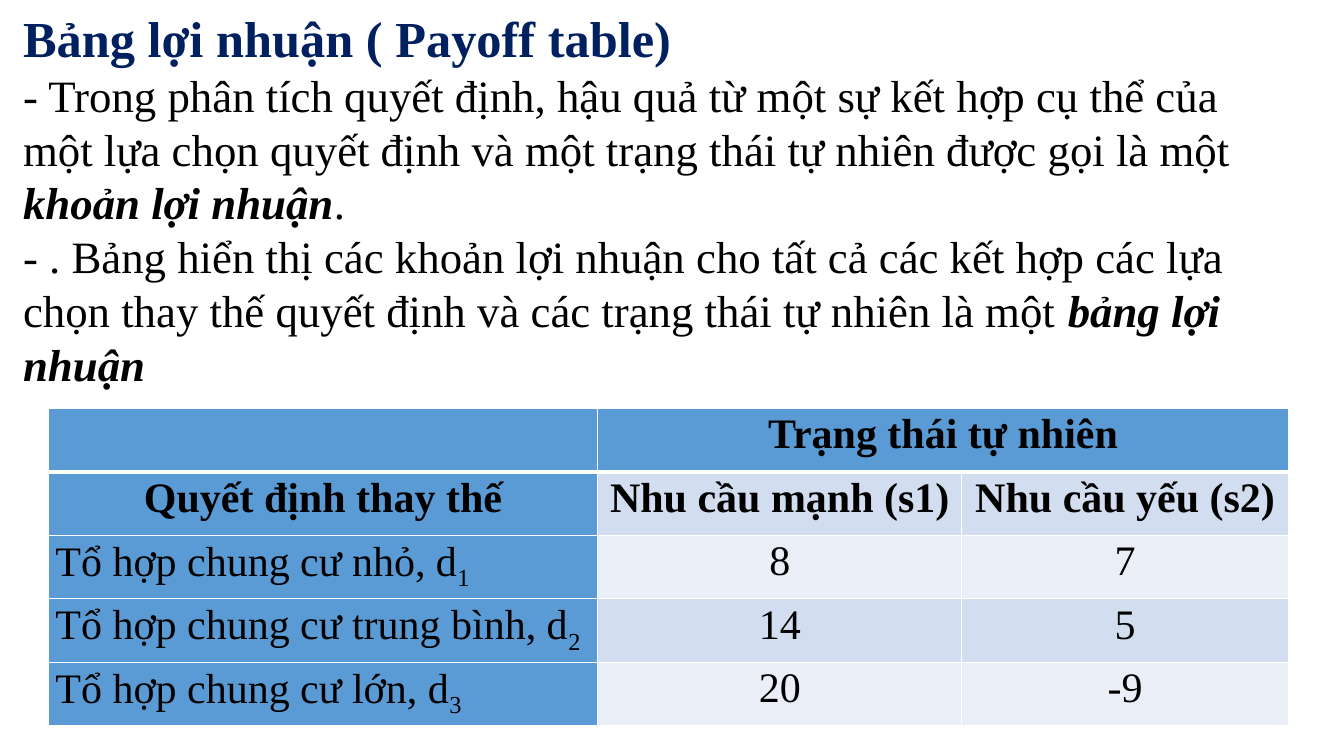
from dataclasses import dataclass

from lxml import etree
from pptx import Presentation
from pptx import util as u
from pptx.dml.color import RGBColor
from pptx.enum import text
from pptx.oxml import ns

PX = 9144  # EMU in one px, 100 px to the inch


@dataclass(frozen=True)
class Theme:
    font: str = "Times New Roman"
    title: str = "002060"
    ink: str = "000000"
    line: str = "FFFFFF"
    header: str = "5B9BD5"
    bands: tuple = ("D2DEEF", "EAEFF7")
    title_size: int = 36
    body_size: int = 32
    table_size: int = 30


class SlideBuilder:
    def __init__(self, prs, theme):
        self.theme = theme
        self.s = prs.slides.add_slide(prs.slide_layouts[6])

    def add_runs(self, p, parts, size, color, bold=False):
        """Add (text, mark) parts; a mark is "", "strong" or "sub"."""
        for content, mark in parts:
            r = p.add_run()
            r.text = content
            f = r.font
            f.name, f.size = self.theme.font, u.Pt(size)
            f.color.rgb = RGBColor.from_string(color)
            f.bold = bold or mark == "strong"
            f.italic = mark == "strong"
            if mark == "sub":
                r._r.get_or_add_rPr().set("baseline", "-25000")

    def text_box(self, box, title, paragraphs):
        t = self.theme
        tf = self.s.shapes.add_textbox(*(n * PX for n in box)).text_frame
        tf.word_wrap = True
        tf.auto_size = text.MSO_AUTO_SIZE.SHAPE_TO_FIT_TEXT
        self.add_runs(tf.paragraphs[0], [(title, "")], t.title_size, t.title, True)
        for parts in paragraphs:
            self.add_runs(tf.add_paragraph(), parts, t.body_size, t.ink)

    def borders(self, cell, **widths):
        """Draw the cell's edges, 1 pt wide unless a width is given."""
        tc_pr = cell._tc.get_or_add_tcPr()
        for edge in "LRTB":
            width = u.Pt(widths.get(edge, 1))
            ln = etree.SubElement(tc_pr, ns.qn(f"a:ln{edge}"), w=str(width))
            fill = etree.SubElement(ln, ns.qn("a:solidFill"))
            etree.SubElement(fill, ns.qn("a:srgbClr"), val=self.theme.line)

    def cell(self, cell, parts, fill, bold, centred):
        cell.fill.solid()
        cell.fill.fore_color.rgb = RGBColor.from_string(fill)
        cell.margin_left = cell.margin_right = 7 * PX
        cell.margin_top = cell.margin_bottom = 0
        p = cell.text_frame.paragraphs[0]
        p.line_spacing = 1.07
        p.alignment = text.PP_ALIGN.CENTER if centred else text.PP_ALIGN.LEFT
        self.add_runs(p, parts, self.theme.table_size, self.theme.ink, bold)

    def payoff_table(self, left, top, widths, row_height, rows):
        t = self.theme
        size = (sum(widths) * PX, len(rows) * row_height * PX)
        table = self.s.shapes.add_table(
            len(rows), len(widths), left * PX, top * PX, *size).table
        for column, width in zip(table.columns, widths):
            column.width = width * PX
        for i, row in enumerate(rows):
            table.rows[i].height = row_height * PX
            edge = {0: {"B": 3}, 1: {"T": 3}}.get(i, {})
            for j, parts in enumerate(row):
                cell = table.cell(i, j)
                header = i == 0 or j == 0
                self.borders(cell, **edge)
                self.cell(cell, parts, t.header if header else t.bands[(i - 1) % 2],
                          bold=i < 2, centred=i < 2 or j > 0)
        table.cell(0, 1).merge(table.cell(0, 2))


def plain(*words):
    return [[(word, "")] if word else [] for word in words]


def choice(name, number, *payoffs):
    return [[(f"{name}, d", ""), (number, "sub")], *plain(*payoffs)]


def main():
    prs = Presentation()
    prs.slide_width, prs.slide_height = 1333 * PX, 750 * PX
    slide = SlideBuilder(prs, Theme())
    slide.text_box((13, 2, 1262, 448), "Bảng lợi nhuận ( Payoff table)", [
        [("- Trong phân tích quyết định, hậu quả từ một sự kết hợp cụ thể của "
          "một lựa chọn quyết định và một trạng thái tự nhiên được gọi là một ", ""),
         ("khoản lợi nhuận", "strong"), (".", "")],
        [("- . Bảng hiển thị các khoản lợi nhuận cho tất cả các kết hợp các lựa "
          "chọn thay thế quyết định và các trạng thái tự nhiên là một ", ""),
         ("bảng lợi nhuận", "strong")],
    ])
    slide.payoff_table(48, 405, (545, 361, 324), 63, [
        plain("", "Trạng thái tự nhiên", ""),
        plain("Quyết định thay thế", "Nhu cầu mạnh (s1)", "Nhu cầu yếu (s2)"),
        choice("Tổ hợp chung cư nhỏ", "1", "8", "7"),
        choice("Tổ hợp chung cư trung bình", "2", "14", "5"),
        choice("Tổ hợp chung cư lớn", "3", "20", "-9"),
    ])
    prs.save("out.pptx")


if __name__ == "__main__":
    main()
